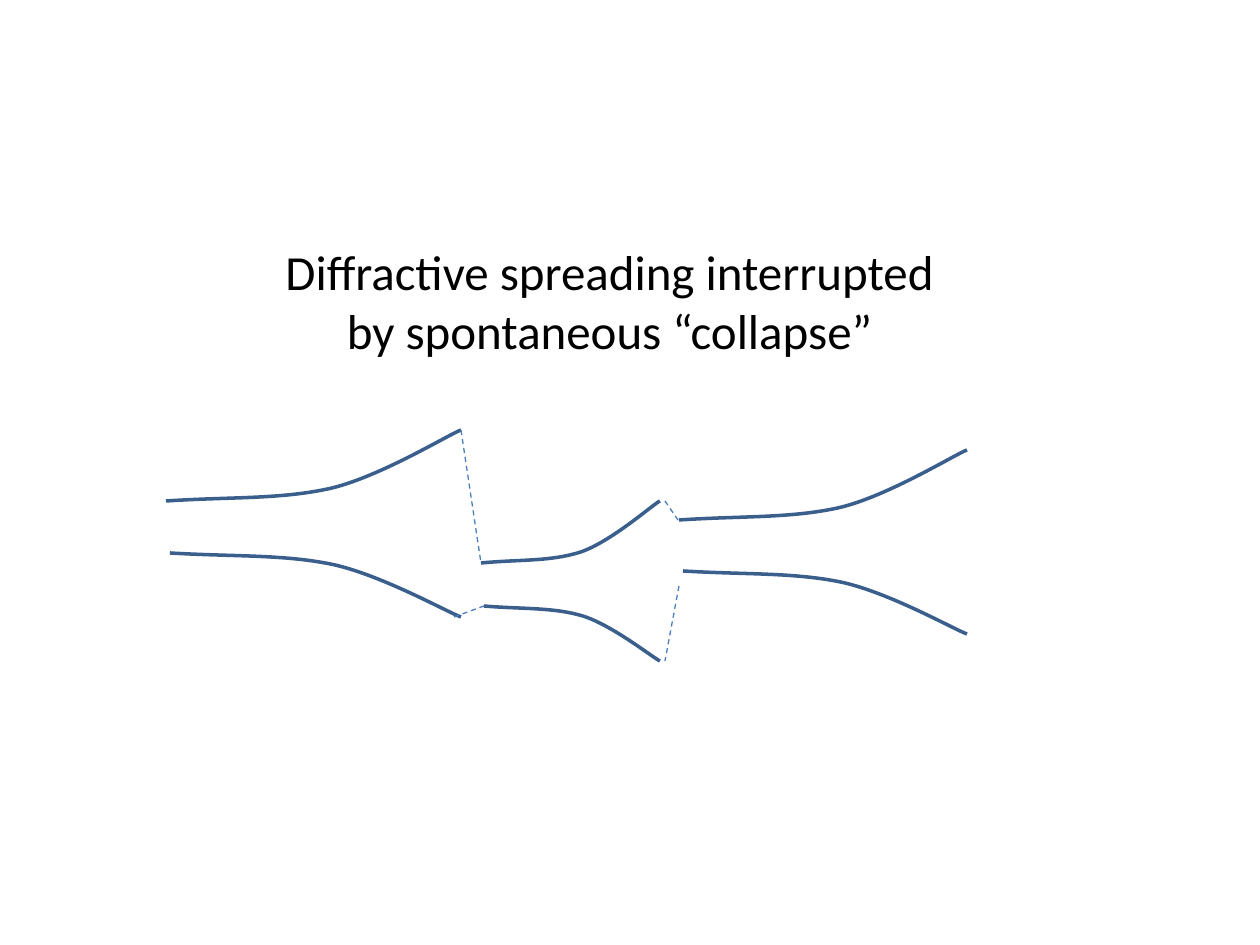
from pptx import Presentation
from pptx.dml.color import RGBColor
from pptx.enum.dml import MSO_LINE
from pptx.enum.shapes import MSO_CONNECTOR
from pptx.enum.text import MSO_ANCHOR, PP_ALIGN
from pptx.oxml.ns import qn
from pptx.util import Pt
from lxml import etree

EMU_PER_PX = 914400 / 126
BLACK = RGBColor(0x00, 0x00, 0x00)
BEAM_BLUE = RGBColor(0x3A, 0x5F, 0x8C)
JUMP_BLUE = RGBColor(0x4B, 0x7E, 0xBC)

# Bezier points of a spreading edge, as shares of its width and height
SPREAD_PROFILE = [(0.22, 0.06), (0.39, 0.02), (0.56, 0.18),
                  (0.73, 0.35), (0.96, 0.94), (1, 1)]

# Beam edges in px: start and end, upper then lower for each stage
BEAM_EDGES = [
    ((166, 501), (461, 430)), ((170, 553), (461, 617)),
    ((481, 563), (660, 501)), ((484, 606), (660, 661)),
    ((679, 520), (967, 450)), ((683, 571), (967, 634)),
]

# Sudden collapses between stages
COLLAPSE_JUMPS = [
    ((461, 430), (481, 563)), ((454, 617), (484, 606)),
    ((665, 501), (678, 520)), ((679, 586), (665, 661)),
]


def px(length):
    return round(length * EMU_PER_PX)


def add_title(slide, text, left, top, width, height):
    title = slide.shapes.add_textbox(px(left), px(top), px(width), px(height))
    frame = title.text_frame
    frame.word_wrap = True
    frame.vertical_anchor = MSO_ANCHOR.MIDDLE
    frame.text = text
    paragraph = frame.paragraphs[0]
    paragraph.alignment = PP_ALIGN.CENTER
    font = paragraph.runs[0].font
    font.name = "Calibri"
    font.size = Pt(28)
    font.color.rgb = BLACK


def curve_segments(outline):
    """Turn each three straight segments into one cubic Bezier segment."""
    segments = list(outline._element.iter(qn("a:lnTo")))
    for first in range(0, len(segments), 3):
        curve = etree.Element(qn("a:cubicBezTo"))
        segments[first].addprevious(curve)
        for segment in segments[first:first + 3]:
            curve.append(segment[0])
            segment.getparent().remove(segment)


def add_beam_edge(beam, start, end):
    (x0, y0), (x1, y1) = start, end
    points = [(px(x0 + (x1 - x0) * across), px(y0 + (y1 - y0) * rise))
              for across, rise in SPREAD_PROFILE]
    builder = beam.shapes.build_freeform(px(x0), px(y0))
    builder.add_line_segments(points, close=False)
    edge = builder.convert_to_shape()
    curve_segments(edge)
    edge.shadow.inherit = False
    edge.fill.background()
    edge.line.color.rgb = BEAM_BLUE
    edge.line.width = Pt(2)


def add_collapse_jump(beam, start, end):
    jump = beam.shapes.add_connector(
        MSO_CONNECTOR.STRAIGHT, *map(px, start + end))
    jump.line.color.rgb = JUMP_BLUE
    jump.line.width = Pt(0.75)
    jump.line.dash_style = MSO_LINE.DASH
    etree.SubElement(jump._element.spPr, qn("a:effectLst"))


def main():
    presentation = Presentation()
    presentation.slide_width = px(1260)
    presentation.slide_height = px(945)
    slide = presentation.slides.add_slide(presentation.slide_layouts[6])

    # Title
    add_title(slide, "Diffractive spreading interrupted by spontaneous “collapse”",
              253, 195, 713, 210)

    # Beam that spreads and collapses
    beam = slide.shapes.add_group_shape()
    for start, end in BEAM_EDGES:
        add_beam_edge(beam, start, end)
    for start, end in COLLAPSE_JUMPS:
        add_collapse_jump(beam, start, end)

    presentation.save("out.pptx")


if __name__ == "__main__":
    main()
